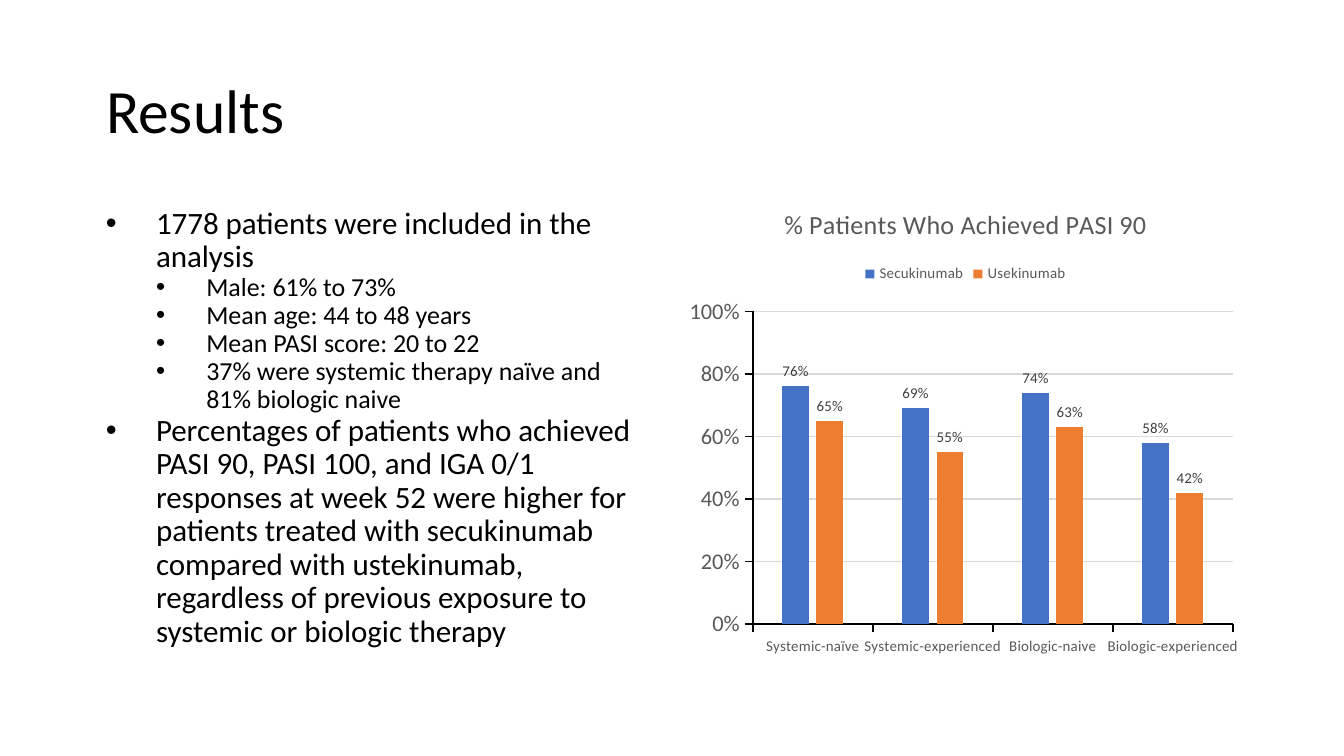
from lxml import etree
from pptx import Presentation
from pptx.chart.data import CategoryChartData
from pptx.dml.color import RGBColor
from pptx.enum import chart as ch, text
from pptx.oxml import ns
from pptx.util import Cm, Pt

BLACK = RGBColor(0x00, 0x00, 0x00)
GREY = RGBColor(0x59, 0x59, 0x59)
DARK = RGBColor(0x40, 0x40, 0x40)
GRID = RGBColor(0xD9, 0xD9, 0xD9)
BLUE = RGBColor(0x44, 0x72, 0xC4)
ORANGE = RGBColor(0xED, 0x7D, 0x31)


def style(font, size, color):
    font.name = "Calibri"
    font.size = Pt(size)
    font.bold = False
    font.color.rgb = color


def place(shape, left, top, width, height):
    shape.left, shape.top = Cm(left), Cm(top)
    shape.width, shape.height = Cm(width), Cm(height)


deck = Presentation()
deck.slide_width, deck.slide_height = Cm(25.4), Cm(14.29)
slide = deck.slides.add_slide(deck.slide_layouts[5])

# Title
title = slide.shapes.title
place(title, 1.75, 0.76, 21.9, 2.77)
frame = title.text_frame
frame.text = "Results"
frame.vertical_anchor = text.MSO_ANCHOR.MIDDLE
para = frame.paragraphs[0]
para.alignment = text.PP_ALIGN.LEFT
para.line_spacing = 0.9
style(para.runs[0].font, 33, BLACK)

# Bulleted findings: level and wording
points = [
    (0, "1778 patients were included in the analysis"),
    (1, "Male: 61% to 73%"),
    (1, "Mean age: 44 to 48 years"),
    (1, "Mean PASI score: 20 to 22"),
    (1, "37% were systemic therapy naïve and 81% biologic naive"),
    (0, "Percentages of patients who achieved PASI 90, PASI 100, and IGA 0/1 "
        "responses at week 52 were higher for patients treated with secukinumab "
        "compared with ustekinumab, regardless of previous exposure to systemic "
        "or biologic therapy"),
]
body = slide.shapes.add_textbox(Cm(1.75), Cm(3.8), Cm(10.8), Cm(9.07))
frame = body.text_frame
frame.word_wrap = True
frame.text = "\n".join(words for level, words in points)
indent = Cm(0.95)
for para, (level, words) in zip(frame.paragraphs, points):
    para.level = level
    para.line_spacing = 0.9
    props = para._p.get_or_add_pPr()
    props.set("marL", str(indent * (level + 1)))
    props.set("indent", str(-indent))
    etree.SubElement(props, ns.qn("a:buFont")).set("typeface", "Arial")
    etree.SubElement(props, ns.qn("a:buChar")).set("char", "•")
    style(para.runs[0].font, 13.9 if level else 16.6, BLACK)

# Chart data
data = CategoryChartData(number_format="0%")
data.categories = ["Systemic-naïve", "Systemic-experienced",
                   "Biologic-naive", "Biologic-experienced"]
data.add_series("Secukinumab", (0.76, 0.69, 0.74, 0.58))
data.add_series("Usekinumab", (0.65, 0.55, 0.63, 0.42))
chart = slide.shapes.add_chart(
    ch.XL_CHART_TYPE.COLUMN_CLUSTERED,
    Cm(12.85), Cm(3.5), Cm(10.8), Cm(9.07), data).chart
style(chart.font, 10, BLACK)

# Chart title and legend
chart.has_title = True
head = chart.chart_title
head.text_frame.text = "% Patients Who Achieved PASI 90"
style(head.text_frame.paragraphs[0].runs[0].font, 14, GREY)
head.include_in_layout = False
chart.has_legend = True
chart.legend.position = ch.XL_LEGEND_POSITION.TOP
chart.legend.include_in_layout = False
style(chart.legend.font, 8, GREY)

# Axes
for axis, size in ((chart.category_axis, 8), (chart.value_axis, 12)):
    style(axis.tick_labels.font, size, GREY)
    axis.major_tick_mark = ch.XL_TICK_MARK.OUTSIDE
    axis.minor_tick_mark = ch.XL_TICK_MARK.NONE
    axis.format.line.color.rgb = BLACK
    axis.format.line.width = Pt(0.75)
scale = chart.value_axis
scale.minimum_scale, scale.maximum_scale, scale.major_unit = 0, 1, 0.2
scale.tick_labels.number_format = "0%"
scale.tick_labels.number_format_is_linked = False
scale.major_gridlines.format.line.color.rgb = GRID
scale.major_gridlines.format.line.width = Pt(0.75)

# Columns and their labels
plot = chart.plots[0]
plot.vary_by_categories = False
plot.gap_width, plot.overlap = 219, -27
for series, color in zip(plot.series, (BLUE, ORANGE)):
    series.format.fill.solid()
    series.format.fill.fore_color.rgb = color
    labels = series.data_labels
    labels.show_value = True
    labels.position = ch.XL_LABEL_POSITION.OUTSIDE_END
    labels.number_format = "0%"
    labels.number_format_is_linked = False
    style(labels.font, 8, DARK)

deck.save("out.pptx")
